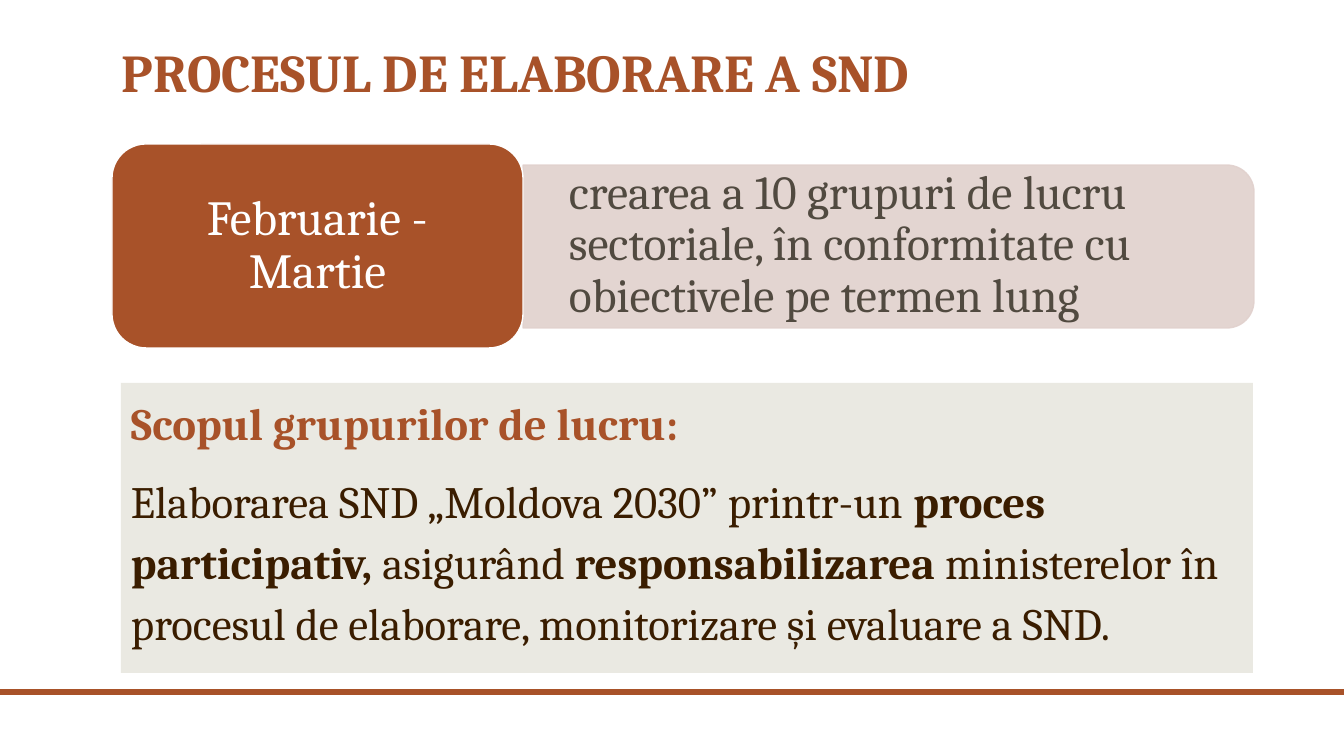
"""Builds the slide on how the SND is drawn up."""
from dataclasses import dataclass
from typing import Optional

from lxml import etree
from pptx import Presentation
from pptx.dml.color import RGBColor
from pptx.enum.shapes import MSO_SHAPE
from pptx.enum.text import MSO_ANCHOR, PP_ALIGN
from pptx.oxml.ns import qn
from pptx.util import Pt

RECT = MSO_SHAPE.RECTANGLE
ROUND = MSO_SHAPE.ROUNDED_RECTANGLE
TAB = MSO_SHAPE.ROUND_2_SAME_RECTANGLE
TOP, MIDDLE, BOTTOM = MSO_ANCHOR.TOP, MSO_ANCHOR.MIDDLE, MSO_ANCHOR.BOTTOM
LEFT, CENTER = PP_ALIGN.LEFT, PP_ALIGN.CENTER
SCALE = 914400 / 100.8


@dataclass(frozen=True)
class Theme:
    font: str = "Cambria"
    rust: str = "A85229"
    rose: str = "E1D1CD"
    sand: str = "EAE9E2"
    white: str = "FFFFFF"
    gray: str = "514A40"
    brown: str = "3A1D00"
    title: int = 38
    month: int = 35
    task: int = 34
    body: int = 32


@dataclass(frozen=True)
class Run:
    text: str
    size: int
    color: str
    bold: bool = False


@dataclass(frozen=True)
class Text:
    lines: list[list[Run]]
    anchor: MSO_ANCHOR
    inset: tuple[int, int, int, int] = (10, 5, 10, 5)
    align: PP_ALIGN = LEFT
    lead: float = 0.9
    after: int = 0


@dataclass(frozen=True)
class Box:
    at: tuple[int, int, int, int]
    kind: Optional[MSO_SHAPE] = None
    fill: str = ""
    line: str = ""
    alpha: int = 100
    turn: int = 0
    text: Optional[Text] = None


def emu(px: int) -> int:
    return round(px * SCALE)


def paint(fill, color: str, alpha: int) -> None:
    fill.solid()
    fill.fore_color.rgb = RGBColor.from_string(color)
    if alpha < 100:
        node = fill.fore_color._xFill.find(qn("a:srgbClr"))
        etree.SubElement(node, qn("a:alpha")).set("val", str(alpha * 1000))


def write(frame, text: Text) -> None:
    frame.word_wrap = True
    frame.vertical_anchor = text.anchor
    (frame.margin_left, frame.margin_top,
     frame.margin_right, frame.margin_bottom) = map(emu, text.inset)
    for i, line in enumerate(text.lines):
        para = frame.add_paragraph() if i else frame.paragraphs[0]
        para.alignment = text.align
        para.line_spacing = text.lead
        para.space_after = Pt(text.after)
        for part in line:
            run = para.add_run()
            run.text = part.text
            run.font.name = THEME.font
            run.font.size = Pt(part.size)
            run.font.bold = part.bold
            run.font.color.rgb = RGBColor.from_string(part.color)


def draw(shapes, box: Box) -> None:
    at = map(emu, box.at)
    if box.kind is None:
        shape = shapes.add_textbox(*at)
    else:
        shape = shapes.add_shape(box.kind, *at)
        shape.shadow.inherit = False
        shape.rotation = box.turn
        paint(shape.fill, box.fill, box.alpha)
        if box.line:
            paint(shape.line.fill, box.line, box.alpha)
            shape.line.width = Pt(1)
        else:
            shape.line.fill.background()
    if box.text:
        write(shape.text_frame, box.text)


THEME = Theme()


def body(text: str, bold: bool = False) -> Run:
    return Run(text, THEME.body, THEME.brown, bold)


TITLE = Text([[Run("PROCESUL DE ELABORARE A SND", THEME.title, THEME.rust, True)]], BOTTOM)
TASK = Text([[Run("crearea a 10 grupuri de lucru sectoriale, în conformitate cu "
                  "obiectivele pe termen lung", THEME.task, THEME.gray)]],
            MIDDLE, (47, 14, 27, 14))
MONTH = Text([[Run("Februarie - Martie", THEME.month, THEME.white)]],
             MIDDLE, (25, 17, 25, 17), CENTER)
SCOPE = Text([
    [Run("Scopul grupurilor de lucru:", THEME.body, THEME.rust, True)],
    [body("Elaborarea SND „Moldova 2030” printr-un "),
     body("proces participativ, ", True),
     body("asigurând "),
     body("responsabilizarea", True),
     body(" ministerelor în procesul de elaborare, monitorizare și evaluare a SND.")],
], TOP, lead=1.14, after=12)

BOXES = [
    Box((0, 689, 1344, 6), RECT, THEME.rust),
    Box((112, 27, 1161, 82), text=TITLE),
    Box((807, -119, 163, 731), TAB, THEME.rose, THEME.rose, 90, 90),
    Box((522, 172, 723, 147), text=TASK),
    Box((112, 144, 411, 204), ROUND, THEME.rust, THEME.white, text=MONTH),
    Box((121, 383, 1132, 290), RECT, THEME.sand, text=SCOPE),
]


def main() -> None:
    deck = Presentation()
    deck.slide_width, deck.slide_height = emu(1344), emu(756)
    slide = deck.slides.add_slide(deck.slide_layouts[6])
    for box in BOXES:
        draw(slide.shapes, box)
    deck.save("out.pptx")


if __name__ == "__main__":
    main()
